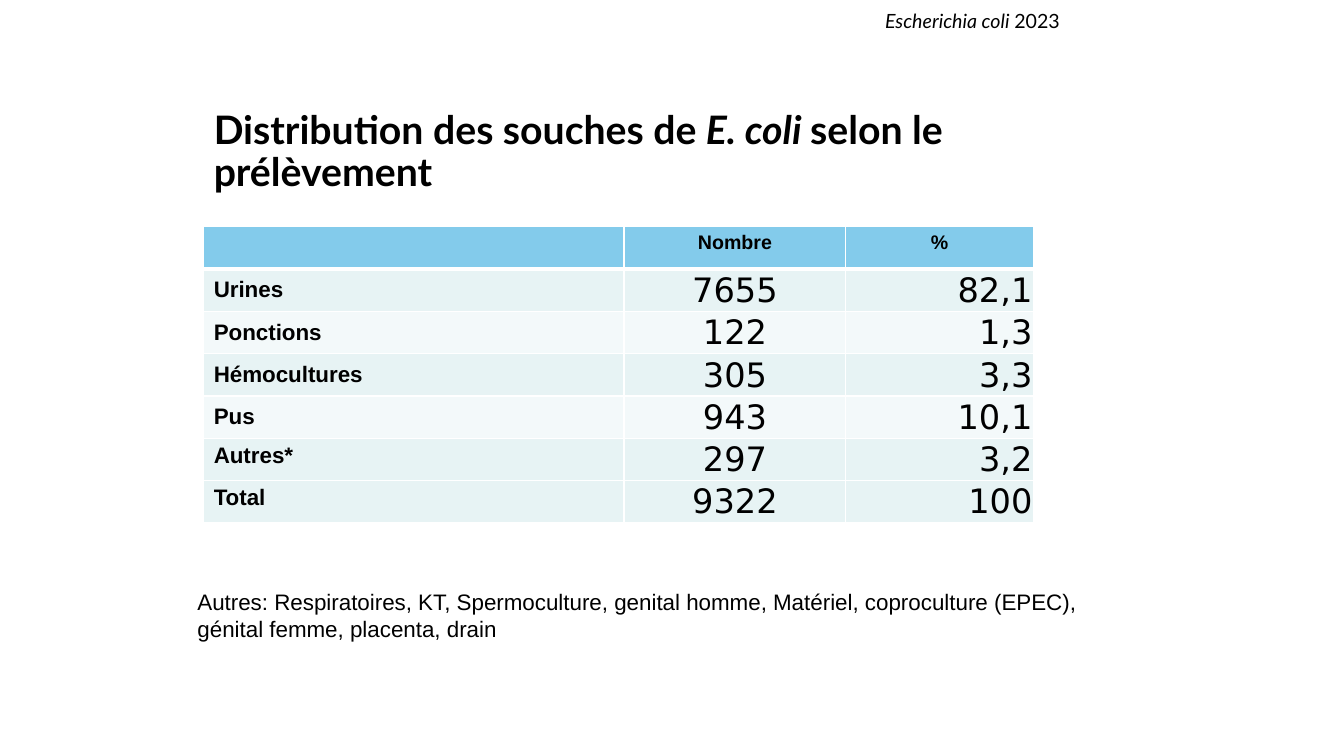
from lxml import etree
from pptx import Presentation
from pptx import util as u
from pptx.dml.color import RGBColor
from pptx.enum import text as t
from pptx.oxml.ns import qn

COLORS = {"text": "000000", "border": "FFFFFF", "header": "83CBEB",
          "dark band": "E7F3F4", "light band": "F3F9FA"}
HEADINGS = ("", "Nombre", "%")
SAMPLES = (("Urines", "7655", "82,1"), ("Ponctions", "122", "1,3"),
           ("Hémocultures", "305", "3,3"), ("Pus", "943", "10,1"),
           ("Autres*", "297", "3,2"), ("Total", "9322", "100"))
COLUMN_WIDTHS = (4.17, 2.2, 1.86)
ALIGNMENTS = (t.PP_ALIGN.LEFT, t.PP_ALIGN.CENTER, t.PP_ALIGN.RIGHT)
ROW_HEIGHT = 0.42
WIDE_INSETS = (0.1, 0.05, 0.1, 0.05)
TIGHT_INSETS = (0.01, 0.01, 0.01, 0)


def color(name):
    return RGBColor.from_string(COLORS[name])


def write(frame, spans, size, font, bold=False, align=t.PP_ALIGN.LEFT):
    """Fill a frame with one paragraph of (wording, italic) spans."""
    para = frame.paragraphs[0]
    para.alignment = align
    para.font.size, para.font.name, para.font.bold = u.Pt(size), font, bold
    para.font.color.rgb = color("text")
    for wording, italic in spans:
        span = para.add_run()
        span.text = wording
        if italic:
            span.font.italic = True
    return para


def place(shape, box):
    shape.left, shape.top, shape.width, shape.height = map(u.Inches, box)


def add_title(page, box):
    title = page.shapes.title
    place(title, box)
    frame = title.text_frame
    frame.auto_size = t.MSO_AUTO_SIZE.NONE
    frame.vertical_anchor = t.MSO_ANCHOR.MIDDLE
    para = write(frame, (("Distribution des souches de ", False), ("E. coli ", True),
                         ("selon le prélèvement", False)), 28, "Lato", bold=True)
    para.line_spacing = 0.9


def add_note(page, box, spans, size, font):
    note = page.shapes.add_textbox(*map(u.Inches, box))
    note.text_frame.word_wrap = True
    write(note.text_frame, spans, size, font)


def set_borders(cell, top, bottom):
    properties = cell._tc.get_or_add_tcPr()
    for index, (side, points) in enumerate(
            (("lnL", 1), ("lnR", 1), ("lnT", top), ("lnB", bottom))):
        line = etree.Element(qn("a:" + side), w=str(u.Pt(points)))
        fill = etree.SubElement(line, qn("a:solidFill"))
        etree.SubElement(fill, qn("a:srgbClr"), val=COLORS["border"])
        properties.insert(index, line)


def format_cell(cell, fill, insets, anchor, top=1, bottom=1):
    cell.fill.solid()
    cell.fill.fore_color.rgb = color(fill)
    (cell.margin_left, cell.margin_top,
     cell.margin_right, cell.margin_bottom) = map(u.Inches, insets)
    cell.vertical_anchor = anchor
    set_borders(cell, top, bottom)


def add_sample_table(page, left, top):
    rows = len(SAMPLES) + 1
    table = page.shapes.add_table(
        rows, len(HEADINGS), u.Inches(left), u.Inches(top),
        u.Inches(sum(COLUMN_WIDTHS)), u.Inches(rows * ROW_HEIGHT)).table
    for column, width in zip(table.columns, COLUMN_WIDTHS):
        column.width = u.Inches(width)
    for row in table.rows:
        row.height = u.Inches(ROW_HEIGHT)

    for column, heading in enumerate(HEADINGS):
        cell = table.cell(0, column)
        format_cell(cell, "header", WIDE_INSETS, t.MSO_ANCHOR.TOP, bottom=3)
        write(cell.text_frame, ((heading, False),) if heading else (), 14, "Arial",
              bold=True, align=t.PP_ALIGN.CENTER)

    for row, sample in enumerate(SAMPLES, start=1):
        is_total = row == len(SAMPLES)
        band = "dark band" if row % 2 or is_total else "light band"
        for column, wording in enumerate(sample):
            cell = table.cell(row, column)
            is_label = column == 0
            at_top = is_label and sample[0] in ("Autres*", "Total")
            format_cell(cell, band, WIDE_INSETS if is_label else TIGHT_INSETS,
                        t.MSO_ANCHOR.TOP if at_top else t.MSO_ANCHOR.MIDDLE,
                        top=3 if row == 1 else 1)
            size, font = (16, "Arial") if is_label else (24, "DejaVu Sans")
            write(cell.text_frame, ((wording, False),), size, font,
                  bold=is_label, align=ALIGNMENTS[column])


def main():
    deck = Presentation()
    deck.slide_width, deck.slide_height = u.Inches(13.33), u.Inches(7.5)
    page = deck.slides.add_slide(deck.slide_layouts[5])
    add_title(page, (2.02, 0.89, 9, 1.25))
    add_sample_table(page, 2.02, 2.25)
    add_note(page, (1.86, 5.79, 9.13, 0.64),
             (("Autres: Respiratoires, KT, Spermoculture, genital homme, Matériel, "
               "coproculture (EPEC), génital femme, placenta, drain", False),), 16, "Arial")
    add_note(page, (8.68, 0.04, 2.52, 0.34),
             (("Escherichia coli ", True), ("2023", False)), 14, "Lato")
    deck.save("out.pptx")


if __name__ == "__main__":
    main()
